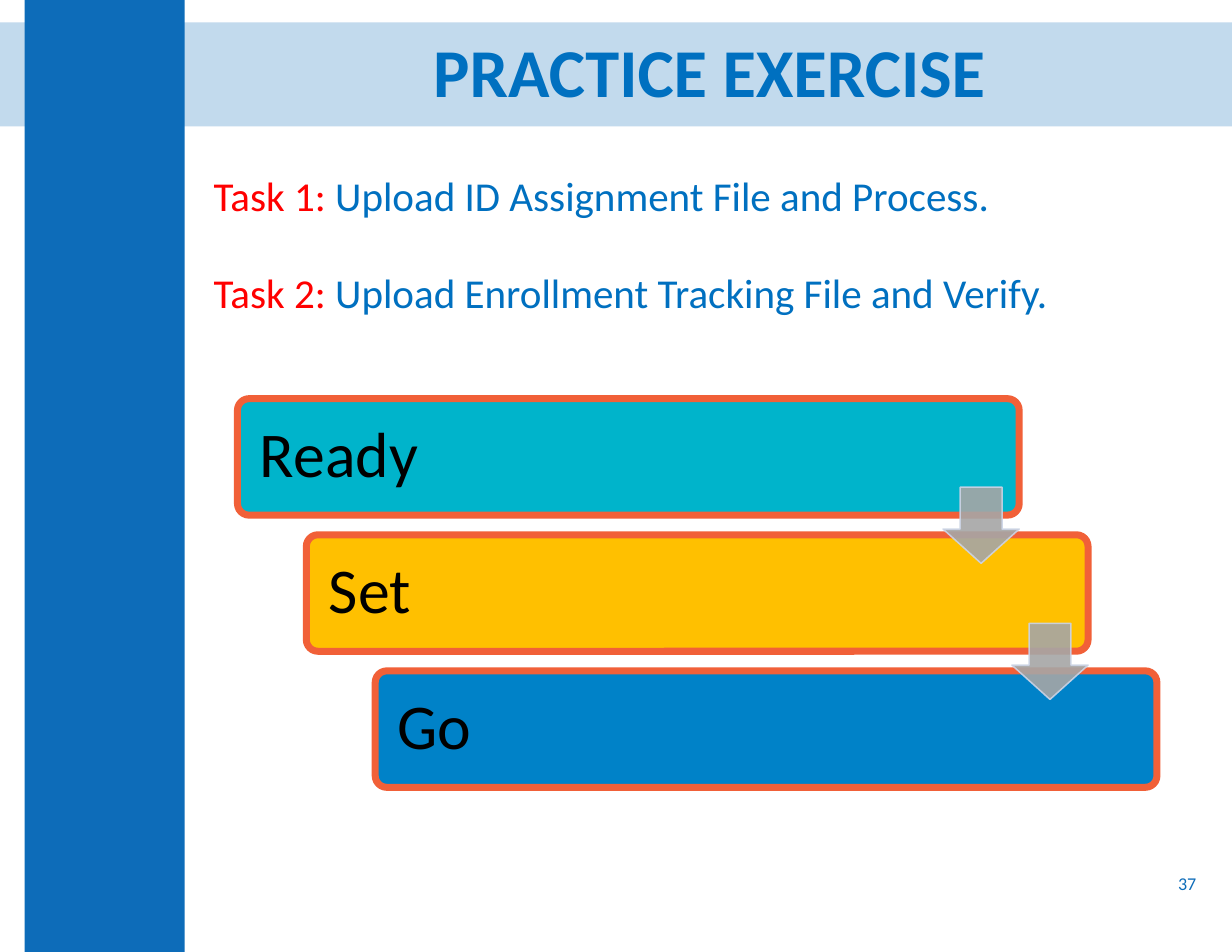
from dataclasses import dataclass

from lxml import etree
from pptx import Presentation
from pptx import util as u
from pptx.dml.color import RGBColor
from pptx.enum import shapes, text
from pptx.oxml.ns import qn

FONT = "Calibri"
BRAND_BLUE = "0D6CB9"
TEXT_BLUE = "0070C0"
RED = "FF0000"


@dataclass
class Span:
    words: str
    size: float
    color: str
    bold: bool = False


@dataclass
class Step:
    label: str
    fill: str


@dataclass
class Area:
    left: float
    top: float
    width: float
    height: float

    def lengths(self):
        return [u.Inches(n) for n in (self.left, self.top, self.width, self.height)]


def hex_color(value: str) -> RGBColor:
    return RGBColor.from_string(value)


def set_opacity(fill, percent: int) -> None:
    color = fill._xPr.find(qn("a:solidFill"))[0]
    etree.SubElement(color, qn("a:alpha"), val=str(percent * 1000))


def add_block(page, kind, area: Area, color: str, opacity: int = 100,
              line: str = "", line_width: float = 0):
    block = page.shapes.add_shape(kind, *area.lengths())
    block.shadow.inherit = False
    block.fill.solid()
    block.fill.fore_color.rgb = hex_color(color)
    if line:
        block.line.color.rgb = hex_color(line)
        block.line.width = u.Pt(line_width)
    else:
        block.line.fill.background()
    if opacity < 100:
        set_opacity(block.fill, opacity)
        if line:
            set_opacity(block.line.fill, opacity)
    return block


def write(box, lines: list[list[Span]], align=text.PP_ALIGN.LEFT,
          anchor=text.MSO_ANCHOR.MIDDLE, spacing: float = 1, gap: float = 0) -> None:
    frame = box.text_frame
    frame.word_wrap = True
    frame.vertical_anchor = anchor
    for index, spans in enumerate(lines):
        para = frame.paragraphs[0] if index == 0 else frame.add_paragraph()
        para.alignment = align
        para.line_spacing = spacing
        para.space_before = u.Pt(gap if index else 0)
        for span in spans:
            run = para.add_run()
            run.text = span.words
            run.font.name = FONT
            run.font.size = u.Pt(span.size)
            run.font.bold = span.bold
            run.font.color.rgb = hex_color(span.color)


def add_text(page, area: Area, lines: list[list[Span]], **style) -> None:
    write(page.shapes.add_textbox(*area.lengths()), lines, **style)


def add_staircase(page, steps: list[Step]) -> None:
    left, top, across, down = 2.12, 3.56, 0.615, 1.215
    for index, step in enumerate(steps):
        area = Area(left + index * across, top + index * down, 6.98, 1.04)
        bar = add_block(page, shapes.MSO_SHAPE.ROUNDED_RECTANGLE, area, step.fill,
                        line="F16038", line_width=4.5)
        bar.adjustments[0] = 0.1
        frame = bar.text_frame
        frame.margin_left = frame.margin_right = u.Inches(0.17)
        frame.margin_top = frame.margin_bottom = u.Inches(0.17)
        write(bar, [[Span(step.label, 41, "000000")]], spacing=0.9)
    for index in range(len(steps) - 1):
        area = Area(8.42 + index * across, 4.35 + index * down, 0.68, 0.68)
        arrow = add_block(page, shapes.MSO_SHAPE.DOWN_ARROW, area, "A6A6A6", 90,
                          line="CCD4E6", line_width=1)
        arrow.adjustments[0] = 0.55
        arrow.adjustments[1] = 0.45


def main() -> None:
    deck = Presentation()
    deck.slide_width, deck.slide_height = u.Inches(11), u.Inches(8.5)
    page = deck.slides.add_slide(deck.slide_layouts[6])

    rectangle = shapes.MSO_SHAPE.RECTANGLE
    add_block(page, rectangle, Area(0, 0.2, 11, 0.93), BRAND_BLUE, 25)
    add_block(page, rectangle, Area(0.22, 0, 1.43, 8.5), BRAND_BLUE)
    add_text(page, Area(1.99, 0.21, 8.69, 0.93),
             [[Span("PRACTICE EXERCISE", 44, TEXT_BLUE, True)]],
             align=text.PP_ALIGN.CENTER, spacing=0.9)
    add_text(page, Area(8.3, 7.72, 2.48, 0.33), [[Span("37", 11.6, BRAND_BLUE)]],
             align=text.PP_ALIGN.RIGHT)
    add_staircase(page, [Step("Ready", "00B4CB"), Step("Set", "FFC000"),
                         Step("Go", "0082C8")])

    tasks = [("Task 1:", " Upload ID Assignment File and Process."),
             ("Task 2:", " Upload Enrollment Tracking File and Verify.")]
    add_text(page, Area(1.81, 1.47, 8.83, 1.57),
             [[Span(name, 26.4, RED), Span(action, 26.4, TEXT_BLUE)]
              for name, action in tasks],
             anchor=text.MSO_ANCHOR.TOP, gap=31)
    deck.save("out.pptx")


if __name__ == "__main__":
    main()
